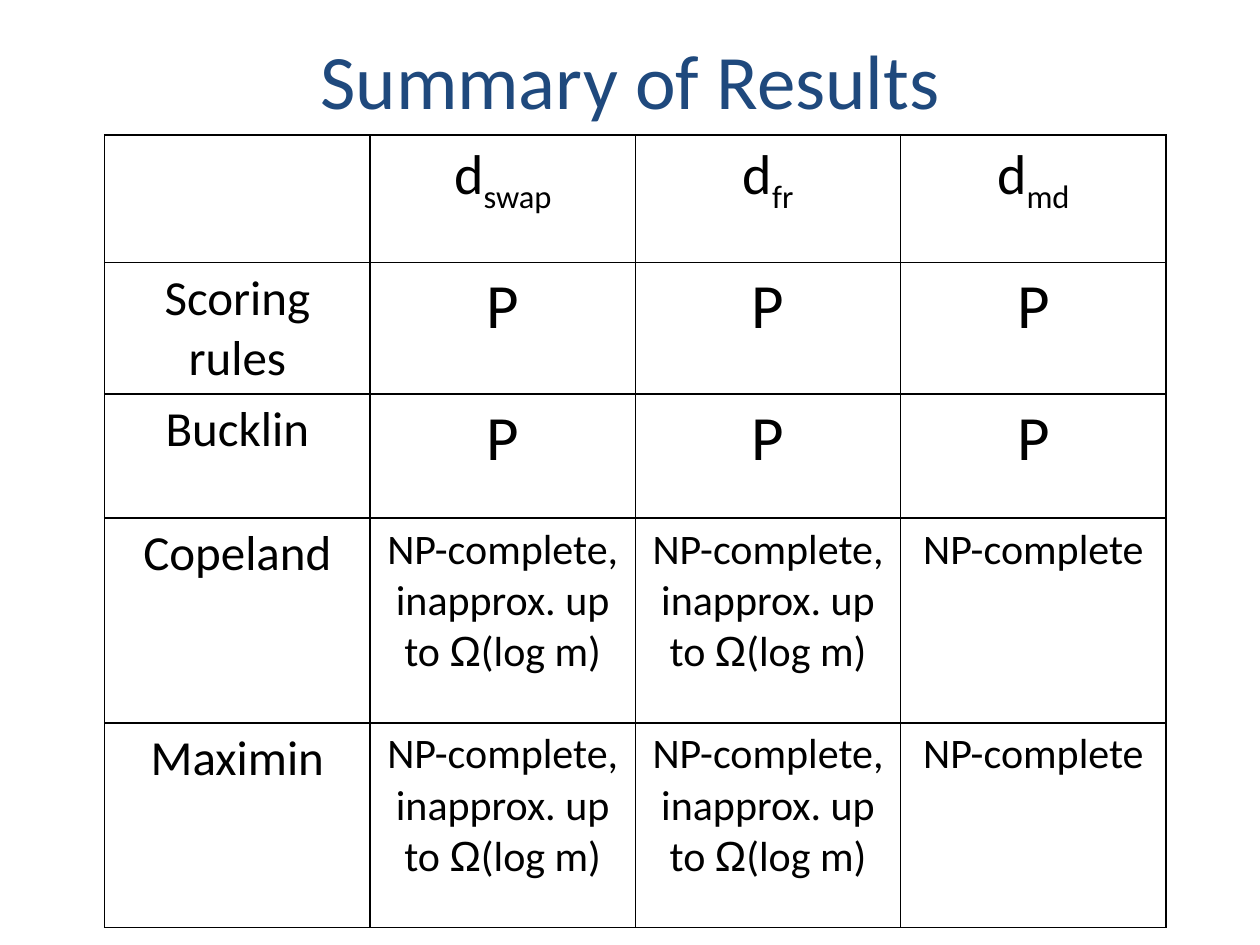
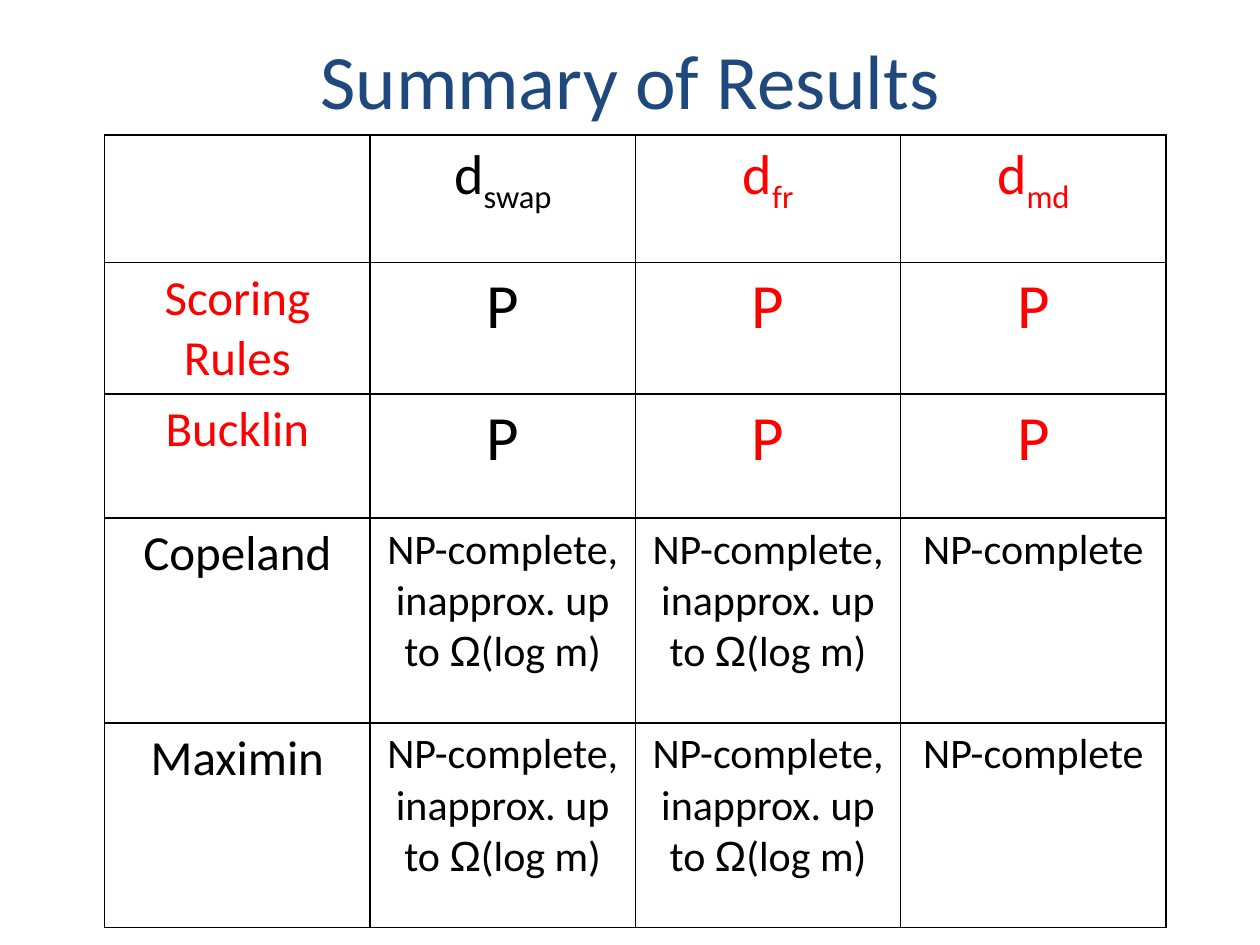
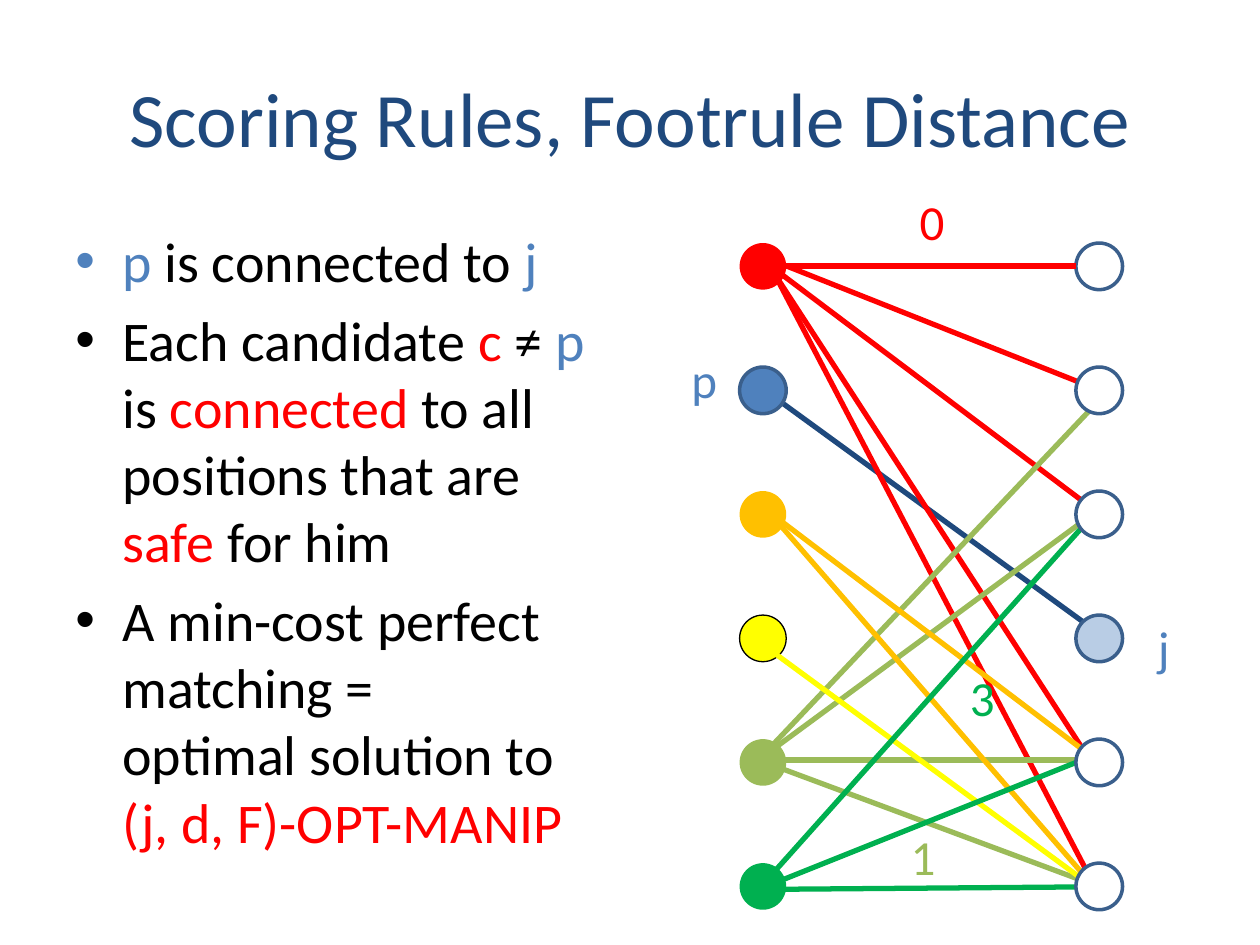
from dataclasses import dataclass

from lxml.etree import SubElement
from pptx import Presentation
from pptx.dml.color import RGBColor
from pptx.enum.shapes import MSO_CONNECTOR, MSO_SHAPE
from pptx.enum.text import MSO_ANCHOR, PP_ALIGN
from pptx.oxml import parse_xml
from pptx.oxml.ns import nsdecls, qn
from pptx.util import Cm, Pt


@dataclass(frozen=True)
class Theme:
    font: str = "Calibri"
    symbol_font: str = "Arial"
    navy: str = "1F497D"
    outline: str = "3A5F8C"
    blue: str = "4F81BD"
    pale_blue: str = "B9CDE5"
    black: str = "000000"
    white: str = "FFFFFF"
    red: str = "FF0000"
    orange: str = "FFC000"
    yellow: str = "FFFF00"
    olive: str = "9BBB59"
    green: str = "00B050"
    title_size: int = 44
    body_size: int = 32
    verdict_size: int = 36
    label_size: int = 28
    detail_size: int = 24
    edge_width: int = 3


THEME = Theme()

ROW_HEIGHTS = (2.57, 2.65, 2.5, 4.13, 4.13)
COLUMN_WIDTH = 5.35

NODE_SIZE = 0.94
NODE_TOP = 4.9
NODE_PITCH = 2.5
CANDIDATES_LEFT = 14.91
POSITIONS_LEFT = 21.69

# Fill, outline colour and outline width of each candidate, from the top
CANDIDATES = (
    (THEME.red, None, 0),
    (THEME.blue, THEME.outline, 2),
    (THEME.orange, None, 0),
    (THEME.yellow, THEME.black, 0.75),
    (THEME.olive, None, 0),
    (THEME.green, None, 0),
)
POSITION_FILLS = (THEME.white,) * 3 + (THEME.pale_blue,) + (THEME.white,) * 2

# Colour, start and ends of the edges that leave one point
EDGE_FANS = (
    (THEME.red, (15.49, 5.33), ((22.1, 15.52), (22.1, 10.31))),
    (THEME.red, (15.85, 5.36), ((22.3, 7.92),)),
    (THEME.red, (15.7, 5.69), ((22.1, 17.93),)),
    (THEME.olive, (15.29, 15.32),
     ((22.3, 17.93), (22.1, 15.32), (22.1, 10.31), (22.3, 7.92))),
    (THEME.orange, (15.49, 10.31), ((22.1, 15.32), (22.1, 17.93))),
    (THEME.yellow, (15.29, 12.93), ((22.1, 17.93),)),
    (THEME.green, (15.29, 17.93),
     ((22.1, 10.31), (21.69, 17.88), (21.69, 15.37))),
)

# Text, colour, left, top, width
GRAPH_LABELS = (
    ("p", THEME.blue, 13.69, 6.93, 1.04),
    ("j", THEME.blue, 23.09, 12.32, 0.76),
    ("3", THEME.green, 19.3, 13.34, 1.02),
    ("0", THEME.red, 18.29, 3.73, 1.02),
    ("1", THEME.olive, 18.11, 16.54, 1.02),
)

BULLETS = (
    (("p", THEME.blue), (" is connected to ", THEME.black), ("j", THEME.blue)),
    (("Each candidate ", THEME.black), ("c", THEME.red), (" ≠ ", THEME.black),
     ("p \n", THEME.blue), ("is ", THEME.black), ("connected", THEME.red),
     (" to all positions that are \n", THEME.black), ("safe", THEME.red),
     (" for him", THEME.black)),
    (("A min-cost perfect matching = \noptimal solution to \n", THEME.black),
     ("(j, d, F)-OPT-MANIP", THEME.red)),
)


def rgb(color):
    return RGBColor.from_string(color)


def add_run(paragraph, text, size, color, font=THEME.font, subscript=False):
    """Add text in one style; each newline becomes a line break."""
    for index, line in enumerate(text.split("\n")):
        if index:
            paragraph.add_line_break()
        if not line:
            continue
        run = paragraph.add_run()
        run.text = line
        run.font.name = font
        run.font.size = Pt(size)
        run.font.color.rgb = rgb(color)
        if subscript:
            run.font._element.set("baseline", "-25000")


def add_text_frame(slide, left, top, width, height, wrap=True):
    box = slide.shapes.add_textbox(Cm(left), Cm(top), Cm(width), Cm(height))
    box.text_frame.word_wrap = wrap
    return box.text_frame


def add_title(slide, text, top):
    frame = add_text_frame(slide, 1.28, top, 22.86, 3.18)
    frame.vertical_anchor = MSO_ANCHOR.MIDDLE
    paragraph = frame.paragraphs[0]
    paragraph.alignment = PP_ALIGN.CENTER
    add_run(paragraph, text, THEME.title_size, THEME.navy)


def style_cell(cell):
    """Leave the cell unfilled, with a thin black border on each side."""
    cell.fill.background()
    properties = cell._tc.get_or_add_tcPr()
    for index, side in enumerate(("lnL", "lnR", "lnT", "lnB")):
        properties.insert(index, parse_xml(
            f'<a:{side} {nsdecls("a")} w="12700"><a:solidFill>'
            f'<a:srgbClr val="{THEME.black}"/></a:solidFill></a:{side}>'))


def summary_rows(scoring_label):
    """Return the table as rows of cells, each a list of run settings."""
    def label(text):
        return [dict(text=text, size=THEME.label_size)]

    def distance(name):
        return [dict(text="d", size=THEME.body_size),
                dict(text=name, size=THEME.body_size, subscript=True)]

    easy = [dict(text="P", size=THEME.verdict_size)]
    hard = [dict(text="NP-complete", size=THEME.detail_size)]
    inapproximable = [
        dict(text="NP-complete, inapprox. up to ", size=THEME.detail_size),
        dict(text="Ω", size=THEME.detail_size, font=THEME.symbol_font),
        dict(text="(log m)", size=THEME.detail_size),
    ]
    return [
        [[], distance("swap"), distance("fr"), distance("md")],
        [label(scoring_label), easy, easy, easy],
        [label("Bucklin"), easy, easy, easy],
        [label("Copeland"), inapproximable, inapproximable, hard],
        [label("Maximin"), inapproximable, inapproximable, hard],
    ]


def add_summary_table(slide, rows, highlight):
    """Add the table; highlight marks the polynomial fr and md results in red."""
    column_count = len(rows[0])
    table = slide.shapes.add_table(
        len(rows), column_count, Cm(2.11), Cm(2.72),
        Cm(COLUMN_WIDTH * column_count), Cm(sum(ROW_HEIGHTS))).table
    table.first_row = table.horz_banding = False
    for column in table.columns:
        column.width = Cm(COLUMN_WIDTH)
    for row_index, row in enumerate(rows):
        table.rows[row_index].height = Cm(ROW_HEIGHTS[row_index])
        for column_index, runs in enumerate(row):
            cell = table.cell(row_index, column_index)
            style_cell(cell)
            paragraph = cell.text_frame.paragraphs[0]
            paragraph.alignment = PP_ALIGN.CENTER
            marked = highlight and row_index <= 2 and column_index != 1
            for run in runs:
                add_run(paragraph, color=THEME.red if marked else THEME.black, **run)


def add_bullets(slide):
    frame = add_text_frame(slide, 1.27, 4.45, 11.84, 13.69)
    for index, runs in enumerate(BULLETS):
        paragraph = frame.add_paragraph() if index else frame.paragraphs[0]
        paragraph.space_before = Pt(THEME.body_size * 0.2)
        properties = paragraph._p.get_or_add_pPr()
        properties.set("marL", str(Cm(0.95)))
        properties.set("indent", str(Cm(-0.95)))
        SubElement(properties, qn("a:buFont")).set("typeface", THEME.symbol_font)
        SubElement(properties, qn("a:buChar")).set("char", "•")
        for text, color in runs:
            add_run(paragraph, text, THEME.body_size, color)


def add_node(slide, left, row, fill, outline, outline_width):
    node = slide.shapes.add_shape(
        MSO_SHAPE.OVAL, Cm(left), Cm(NODE_TOP + row * NODE_PITCH),
        Cm(NODE_SIZE), Cm(NODE_SIZE))
    node.shadow.inherit = False
    node.fill.solid()
    node.fill.fore_color.rgb = rgb(fill)
    if outline:
        node.line.color.rgb = rgb(outline)
        node.line.width = Pt(outline_width)
    else:
        node.line.fill.background()


def add_edge(slide, color, start, end):
    points = [Cm(value) for value in (*start, *end)]
    edge = slide.shapes.add_connector(MSO_CONNECTOR.STRAIGHT, *points)
    edge.line.color.rgb = rgb(color)
    edge.line.width = Pt(THEME.edge_width)
    SubElement(edge._element.spPr, qn("a:effectLst"))


def add_matching_graph(slide):
    for row, style in enumerate(CANDIDATES):
        add_node(slide, CANDIDATES_LEFT, row, *style)
    for color, start, ends in EDGE_FANS:
        for end in ends:
            add_edge(slide, color, start, end)
    for row, fill in enumerate(POSITION_FILLS):
        add_node(slide, POSITIONS_LEFT, row, fill, THEME.outline, 2)
    for text, color, left, top, width in GRAPH_LABELS:
        frame = add_text_frame(slide, left, top, width, 1.45, wrap=False)
        add_run(frame.paragraphs[0], text, THEME.label_size, color)
    add_edge(slide, THEME.red, (15.85, 5.36), (21.69, 5.36))


def main():
    presentation = Presentation()
    presentation.slide_width, presentation.slide_height = Cm(25.4), Cm(19.05)
    blank = presentation.slide_layouts[6]

    for scoring_label, highlight in (("Scoring rules", False), ("Scoring Rules", True)):
        slide = presentation.slides.add_slide(blank)
        add_title(slide, "Summary of Results", 0)
        add_summary_table(slide, summary_rows(scoring_label), highlight)

    slide = presentation.slides.add_slide(blank)
    add_edge(slide, THEME.navy, (15.49, 7.92), (22.1, 12.73))
    add_title(slide, "Scoring Rules, Footrule Distance", 0.76)
    add_bullets(slide)
    add_matching_graph(slide)

    presentation.save("out.pptx")


if __name__ == "__main__":
    main()
